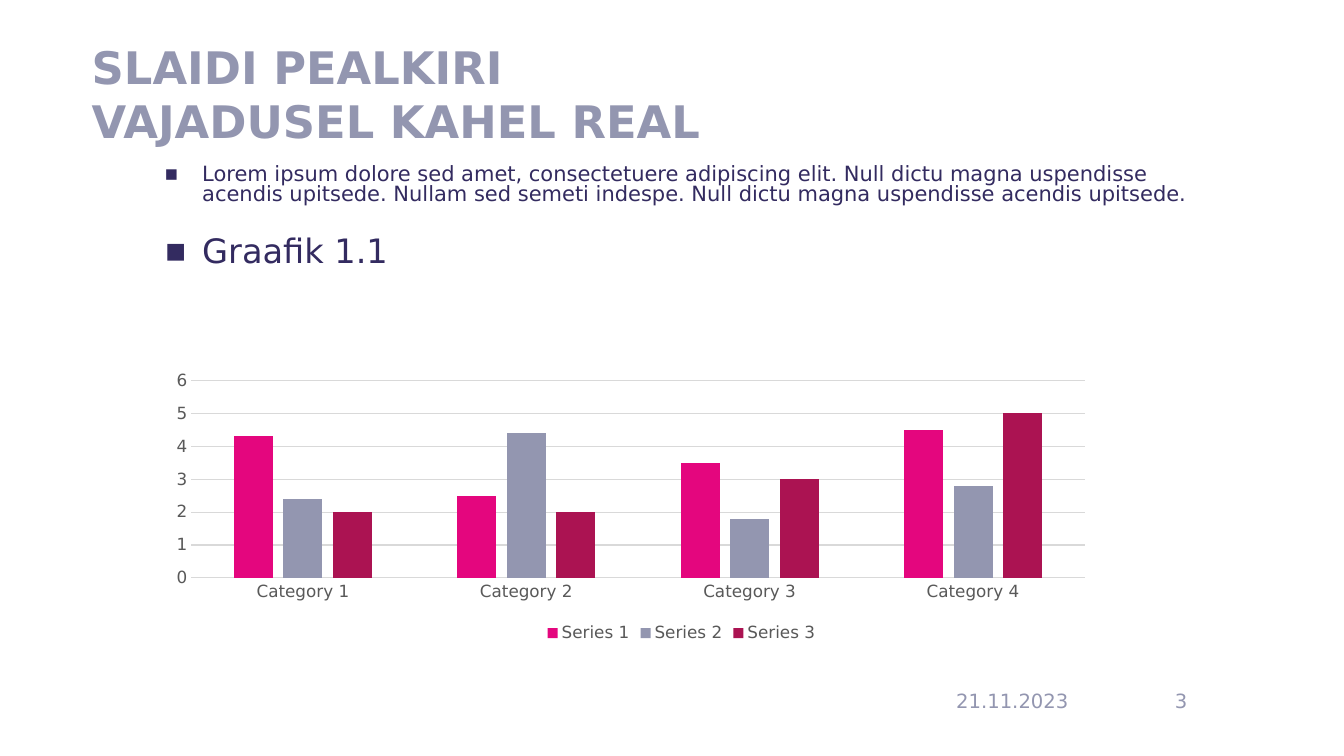
from dataclasses import dataclass

from lxml.etree import SubElement
from pptx import Presentation
from pptx.chart.data import CategoryChartData
from pptx.dml.color import RGBColor as RGB
from pptx.enum.chart import XL_CHART_TYPE as ChartType
from pptx.enum.chart import XL_LEGEND_POSITION as LegendPos
from pptx.enum.chart import XL_TICK_MARK as Tick
from pptx.enum.text import MSO_ANCHOR as Anchor
from pptx.enum.text import MSO_AUTO_SIZE as AutoSize
from pptx.enum.text import PP_ALIGN as Align
from pptx.oxml import parse_xml
from pptx.oxml.ns import nsdecls, qn
from pptx.util import Pt


@dataclass(frozen=True)
class Theme:
    font: str = "DejaVu Sans"
    navy: str = "332B60"
    slate: str = "9396B0"
    pink: str = "E4067E"
    crimson: str = "AB1352"
    gray: str = "595959"
    grid: str = "D9D9D9"
    title: int = 32
    heading: int = 24
    body: int = 15
    footer: int = 14
    chart: int = 12


@dataclass(frozen=True)
class Box:
    left: float
    top: float
    width: float
    height: float

    def points(self) -> tuple:
        return Pt(self.left), Pt(self.top), Pt(self.width), Pt(self.height)


@dataclass(frozen=True)
class Bullet:
    idx: int
    box: Box
    text: str
    size: int
    spacing: float


@dataclass(frozen=True)
class Footer:
    box: Box
    text: str


@dataclass(frozen=True)
class Series:
    name: str
    values: tuple
    color: str


T = Theme()
TITLE_BOX = Box(58.3, 28.8, 797.8, 75.6)
CHART_BOX = Box(117.4, 262.1, 738.7, 200.2)
PLOT = {"x": 0.026, "y": 0.049, "w": 0.864, "h": 0.704}
TITLE_LINES = ("SLAIDI PEALKIRI", "VAJADUSEL KAHEL REAL")
BULLETS = (
    Bullet(1, Box(117.4, 118.1, 738.7, 32.4),
           "Lorem ipsum dolore sed amet, consectetuere adipiscing elit. "
           "Null dictu magna uspendisse acendis upitsede. Nullam sed semeti "
           "indespe. Null dictu magna uspendisse acendis upitsede.",
           T.body, 0.8),
    Bullet(2, Box(117.4, 164.2, 738.7, 83.5), "Graafik 1.1", T.heading, 1.0),
)
FOOTERS = (
    Footer(Box(586.1, 486, 184.3, 28.8), "21.11.2023"),
    Footer(Box(793.4, 486, 61.9, 28.8), "3"),
)
CATEGORIES = [f"Category {n}" for n in range(1, 5)]
SERIES = (
    Series("Series 1", (4.3, 2.5, 3.5, 4.5), T.pink),
    Series("Series 2", (2.4, 4.4, 1.8, 2.8), T.slate),
    Series("Series 3", (2, 2, 3, 5), T.crimson),
)


def style_font(font, size: float, color: str, bold: bool = False) -> None:
    font.name, font.size, font.bold = T.font, Pt(size), bold
    font.color.rgb = RGB.from_string(color)


def place(sp, box: Box) -> None:
    sp.left, sp.top, sp.width, sp.height = box.points()


def add_title(s) -> None:
    sp = s.shapes.title
    place(sp, TITLE_BOX)
    tf = sp.text_frame
    tf.auto_size, tf.vertical_anchor = AutoSize.NONE, Anchor.MIDDLE
    p = tf.paragraphs[0]
    p.alignment = Align.LEFT
    for i, line in enumerate(TITLE_LINES):
        if i:
            p.add_line_break()
        r = p.add_run()
        r.text = line
        style_font(r.font, T.title, T.slate, bold=True)


def add_bullet(s, item: Bullet) -> None:
    sp = s.placeholders[item.idx]
    place(sp, item.box)
    tf = sp.text_frame
    tf.auto_size, tf.vertical_anchor = AutoSize.NONE, Anchor.TOP
    tf.margin_left = tf.margin_top = tf.margin_right = tf.margin_bottom = 0
    p = tf.paragraphs[0]
    pPr = p._p.get_or_add_pPr()
    pPr.set("marL", str(Pt(27)))
    pPr.set("indent", str(-Pt(27)))
    SubElement(SubElement(pPr, qn("a:buClr")), qn("a:srgbClr"), val=T.navy)
    SubElement(pPr, qn("a:buFont"), typeface=T.font)
    SubElement(pPr, qn("a:buChar"), char="▪")
    p.alignment, p.space_before = Align.LEFT, Pt(0)
    p.line_spacing = item.spacing
    r = p.add_run()
    r.text = item.text
    style_font(r.font, item.size, T.navy)


def add_footer(s, item: Footer) -> None:
    tf = s.shapes.add_textbox(*item.box.points()).text_frame
    tf.word_wrap, tf.vertical_anchor = True, Anchor.MIDDLE
    p = tf.paragraphs[0]
    p.alignment = Align.RIGHT
    r = p.add_run()
    r.text = item.text
    style_font(r.font, T.footer, T.slate)


def style_line(line) -> None:
    line.color.rgb = RGB.from_string(T.grid)
    line.width = Pt(0.75)


def add_chart(s) -> None:
    data = CategoryChartData()
    data.categories = CATEGORIES
    for row in SERIES:
        data.add_series(row.name, row.values)
    chart = s.shapes.add_chart(
        ChartType.COLUMN_CLUSTERED, *CHART_BOX.points(), data).chart
    chart.has_title = False
    style_font(chart.font, T.chart, T.gray)

    # Columns
    plot = chart.plots[0]
    plot.gap_width, plot.overlap, plot.vary_by_categories = 219, -27, False
    for series, row in zip(plot.series, SERIES):
        series.format.fill.solid()
        series.format.fill.fore_color.rgb = RGB.from_string(row.color)

    # Axes and legend
    cat, val = chart.category_axis, chart.value_axis
    for axis in (cat, val):
        axis.major_tick_mark = axis.minor_tick_mark = Tick.NONE
        style_font(axis.tick_labels.font, T.chart, T.gray)
    style_line(cat.format.line)
    val.format.line.fill.background()
    val.minimum_scale, val.maximum_scale, val.major_unit = 0, 6, 1
    val.has_major_gridlines = True
    style_line(val.major_gridlines.format.line)
    chart.has_legend = True
    chart.legend.position = LegendPos.BOTTOM
    chart.legend.include_in_layout = False
    style_font(chart.legend.font, T.chart, T.gray)

    # Fixed inner plot area
    area = chart._chartSpace.chart.plotArea
    for old in area.findall(qn("c:layout")):
        area.remove(old)
    modes = "".join(f'<c:{k}Mode val="edge"/>' for k in "xy")
    sizes = "".join(f'<c:{k} val="{v}"/>' for k, v in PLOT.items())
    area.insert(0, parse_xml(
        f'<c:layout {nsdecls("c")}><c:manualLayout>'
        f'<c:layoutTarget val="inner"/>{modes}{sizes}'
        '</c:manualLayout></c:layout>'))


def main() -> None:
    prs = Presentation()
    prs.slide_width, prs.slide_height = Pt(960), Pt(540)
    s = prs.slides.add_slide(prs.slide_layouts.get_by_name("Two Content"))
    add_title(s)
    for bullet in BULLETS:
        add_bullet(s, bullet)
    add_chart(s)
    for footer in FOOTERS:
        add_footer(s, footer)
    prs.save("out.pptx")


if __name__ == "__main__":
    main()
